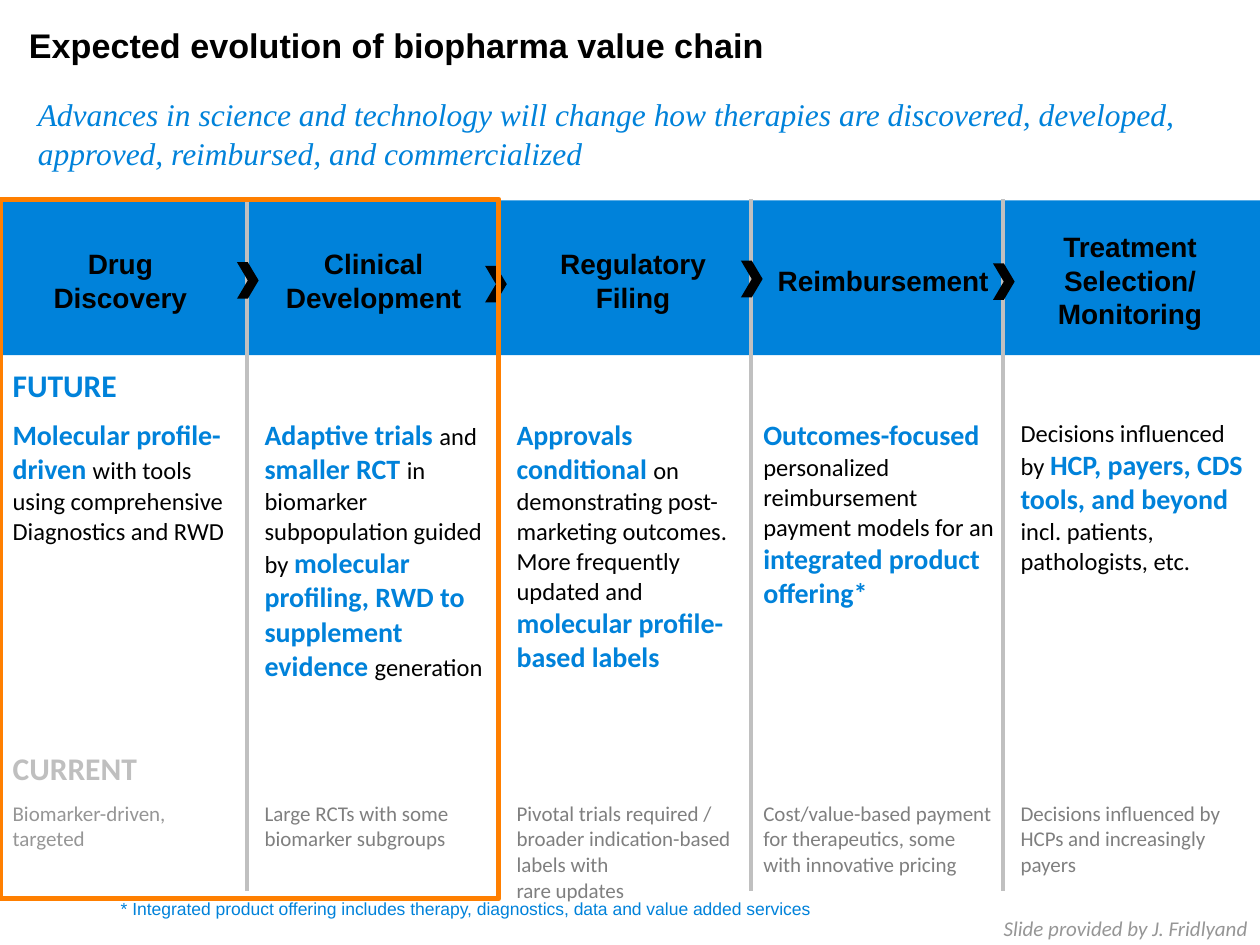
"""Builds the slide on the expected evolution of the biopharma value chain."""
from lxml import etree
from pptx import Presentation
from pptx.dml.color import RGBColor
from pptx.enum import shapes, text
from pptx.oxml import ns
from pptx.util import Pt

BLUE = RGBColor(0x00, 0x82, 0xDA)
BLACK = RGBColor(0x00, 0x00, 0x00)
ORANGE = RGBColor(0xFF, 0x7F, 0x00)
RULE_GRAY = RGBColor(0xC0, 0xC0, 0xC0)
LABEL_GRAY = RGBColor(0xBF, 0xBF, 0xBF)
LIGHT_GRAY = RGBColor(0x96, 0x96, 0x96)
DARK_GRAY = RGBColor(0x7F, 0x7F, 0x7F)


def add_text(para, wording, font, size, color, bold=False, italic=False):
    for index, line in enumerate(wording.split("\n")):
        if index:
            para.add_line_break()
        span = para.add_run()
        span.text = line
        span.font.name = font
        span.font.size = Pt(size)
        span.font.color.rgb = color
        span.font.bold = bold
        span.font.italic = italic


def add_box(left, top, width, height, margin=0):
    frame = page.shapes.add_textbox(Pt(left), Pt(top), Pt(width), Pt(height)).text_frame
    frame.word_wrap = True
    frame.margin_left = frame.margin_right = Pt(2 * margin)
    frame.margin_top = frame.margin_bottom = Pt(margin)
    return frame


deck = Presentation()
deck.slide_width, deck.slide_height = Pt(720), Pt(540)
page = deck.slides.add_slide(deck.slide_layouts[6])

# Each future cell lists its spans; True marks a highlighted span.
future = [
    [("Molecular profile-driven ", True),
     ("with tools using comprehensive Diagnostics and RWD", False)],
    [("Adaptive trials ", True), ("and ", False), ("smaller RCT ", True),
     ("in biomarker subpopulation guided by ", False),
     ("molecular profiling, RWD to supplement evidence ", True), ("generation", False)],
    [("Approvals conditional ", True),
     ("on demonstrating post-marketing outcomes. More frequently updated and ", False),
     ("molecular profile-based labels", True)],
    [("Outcomes-focused ", True),
     ("personalized reimbursement payment models for an ", False),
     ("integrated product offering*", True)],
    [("Decisions influenced by ", False), ("HCP, payers, CDS tools, and beyond ", True),
     ("incl. patients, pathologists, etc.", False)],
]
current = [
    "Biomarker-driven, targeted",
    "Large RCTs with some biomarker subgroups",
    "Pivotal trials required / broader indication-based labels with \nrare updates",
    "Cost/value-based payment for therapeutics, some with innovative pricing",
    "Decisions influenced by HCPs and increasingly payers",
]

table = page.shapes.add_table(4, 5, 0, Pt(206.6), Pt(720), Pt(311.8)).table
table.first_row = table.horz_banding = False
for column, width in zip(table.columns, (144, 144, 141, 147, 144)):
    column.width = Pt(width)
for row, height in zip(table.rows, (28.8, 189.4, 28.8, 64.8)):
    row.height = Pt(height)
for cell in table.iter_cells():
    cell.fill.background()

for row, label, color in ((0, "FUTURE", BLUE), (2, "CURRENT", LABEL_GRAY)):
    add_text(table.cell(row, 0).text_frame.paragraphs[0], label, "Calibri", 18, color, bold=True)
for column, spans in enumerate(future):
    para = table.cell(1, column).text_frame.paragraphs[0]
    for wording, strong in spans:
        add_text(para, wording, "Calibri", 16 if strong else 14, BLUE if strong else BLACK, bold=strong)
for column, wording in enumerate(current):
    para = table.cell(3, column).text_frame.paragraphs[0]
    add_text(para, wording, "Calibri", 12, DARK_GRAY if column else LIGHT_GRAY)

band = page.shapes.add_shape(shapes.MSO_SHAPE.RECTANGLE, 0, Pt(114.5), Pt(720), Pt(88.5))
band.shadow.inherit = False
band.fill.solid()
band.fill.fore_color.rgb = BLUE
band.line.fill.background()

stages = [
    ("Drug\nDiscovery", 21.6, 94.3, 46),
    ("Clinical Development", 155.5, 116, 46),
    ("Regulatory\nFiling", 306, 111.6, 46),
    ("Reimbursement", 434.2, 141, 26.6),
    ("Treatment Selection/\nMonitoring", 575.3, 141, 65.5),
]
for wording, left, width, height in stages:
    frame = add_box(left, 160 - height / 2, width, height, margin=3.6)
    frame.vertical_anchor = text.MSO_ANCHOR.MIDDLE
    para = frame.paragraphs[0]
    para.alignment = text.PP_ALIGN.CENTER
    add_text(para, wording, "Arial", 16, BLACK, bold=True)

title = add_box(16.5, 13.7, 580, 103).paragraphs[0]
add_text(title, "Expected evolution of biopharma value chain", "Arial", 19.5, BLACK, bold=True)

credit = add_box(558, 523.4, 155, 8.6).paragraphs[0]
credit.alignment = text.PP_ALIGN.RIGHT
add_text(credit, "Slide provided by J. Fridlyand", "Calibri", 12, LIGHT_GRAY, italic=True)

subtitle = add_box(21.6, 53, 650, 24.5).paragraphs[0]
subtitle.line_spacing = 1.05
add_text(subtitle, "Advances in science and technology will change how therapies are discovered, "
         "developed, approved, reimbursed, and commercialized", "Times New Roman", 18, BLUE, italic=True)

footnote = add_box(69, 513.4, 454, 15.8).paragraphs[0]
add_text(footnote, "* Integrated product offering includes therapy, diagnostics, data and value added services",
         "Arial", 10, BLUE)

for index in range(4):
    x = Pt(141.1 + 144 * index)
    divider = page.shapes.add_connector(shapes.MSO_CONNECTOR.STRAIGHT, x, Pt(113.8), x, Pt(509))
    divider.line.color.rgb = RULE_GRAY
    divider.line.width = Pt(2)
    etree.SubElement(divider.element.spPr, ns.qn("a:effectLst"))

for left, top in ((135.4, 149.8), (277.2, 151.9), (423.4, 149), (567.4, 150.5)):
    chevron = page.shapes.add_shape(shapes.MSO_SHAPE.CHEVRON, Pt(left), Pt(top), Pt(12.4), Pt(20.9))
    chevron.shadow.inherit = False
    chevron.fill.solid()
    chevron.fill.fore_color.rgb = BLACK
    chevron.line.fill.background()

highlight = page.shapes.add_shape(shapes.MSO_SHAPE.RECTANGLE, 0, Pt(113.8), Pt(285.1), Pt(399.6))
highlight.shadow.inherit = False
highlight.fill.background()
highlight.line.color.rgb = ORANGE
highlight.line.width = Pt(3)

deck.save("out.pptx")
